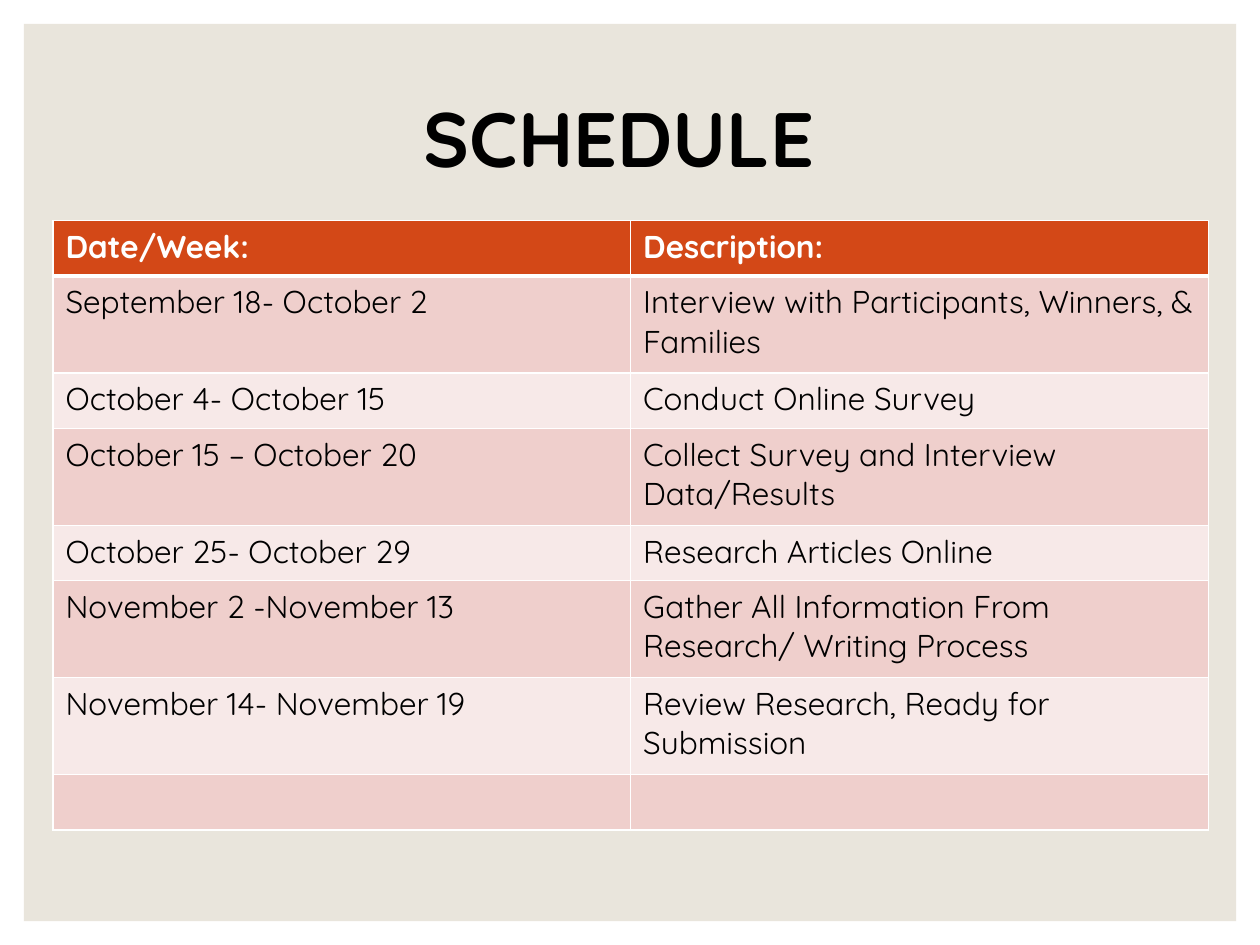
from lxml import etree
from pptx import Presentation
from pptx.dml.color import RGBColor
from pptx.enum import shapes, text
from pptx.oxml.ns import qn
from pptx.util import Inches, Pt

FONT = "Quicksand"
WHITE, BLACK, SAND = "FFFFFF", "000000", "E9E5DC"
HEAD, BANDS = "D34817", ("EFCFCC", "F7E9E8")
ROWS = [
    ("Date/Week:", "Description:"),
    ("September 18- October 2", "Interview with Participants, Winners, & Families"),
    ("October 4- October 15", "Conduct Online Survey"),
    ("October 15 – October 20", "Collect Survey and Interview Data/Results"),
    ("October 25- October 29", "Research Articles Online"),
    ("November 2 -November 13", "Gather All Information From Research/ Writing Process"),
    ("November 14- November 19", "Review Research, Ready for Submission"),
    ("", ""),
]
LOW, TALL = 0.44, 0.77
HEIGHTS = [LOW, TALL, LOW, TALL, LOW, TALL, TALL, LOW]


def paint(fill, color):
    fill.solid()
    fill.fore_color.rgb = RGBColor.from_string(color)


def write(frame, words, size=18, color=BLACK, bold=False, align=None):
    para = frame.paragraphs[0]
    para.alignment = align
    if not words:
        para.font.size = Pt(size)
        return
    run = para.add_run()
    run.text = words
    run.font.name, run.font.size, run.font.bold = FONT, Pt(size), bold
    run.font.color.rgb = RGBColor.from_string(color)


def edge(cell, side, width):
    line = etree.SubElement(cell._tc.get_or_add_tcPr(), qn(f"a:ln{side}"), w=str(Pt(width)))
    fill = etree.SubElement(line, qn("a:solidFill"))
    etree.SubElement(fill, qn("a:srgbClr"), val=WHITE)


def panel(slide):
    box = slide.shapes.add_shape(shapes.MSO_SHAPE.RECTANGLE, Inches(0.19), Inches(0.19),
                                 Inches(9.62), Inches(7.12))
    box.shadow.inherit = False
    paint(box.fill, SAND)
    box.line.fill.background()


def title(slide):
    box = slide.shapes.add_textbox(Inches(3.21), Inches(0.67), Inches(3.58), Inches(0.84))
    box.text_frame.word_wrap = True
    write(box.text_frame, "SCHEDULE ", size=44, bold=True, align=text.PP_ALIGN.CENTER)


def schedule(slide):
    grid = slide.shapes.add_table(len(ROWS), 2, Inches(0.42), Inches(1.75),
                                  Inches(9.17), Inches(sum(HEIGHTS))).table
    for r, (row, high) in enumerate(zip(ROWS, HEIGHTS)):
        grid.rows[r].height = Inches(high)
        head = r == 0
        for c, words in enumerate(row):
            cell = grid.cell(r, c)
            widths = {"L": 1, "R": 1, "T": 3 if r == 1 else 1, "B": 3 if head else 1}
            for side, width in widths.items():
                edge(cell, side, width)
            paint(cell.fill, HEAD if head else BANDS[(r - 1) % 2])
            write(cell.text_frame, words, color=WHITE if head else BLACK, bold=head)


def main():
    deck = Presentation()
    deck.slide_width, deck.slide_height = Inches(10), Inches(7.5)
    slide = deck.slides.add_slide(deck.slide_layouts[6])
    paint(slide.background.fill, WHITE)
    panel(slide)
    schedule(slide)
    title(slide)
    deck.save("out.pptx")


if __name__ == "__main__":
    main()
